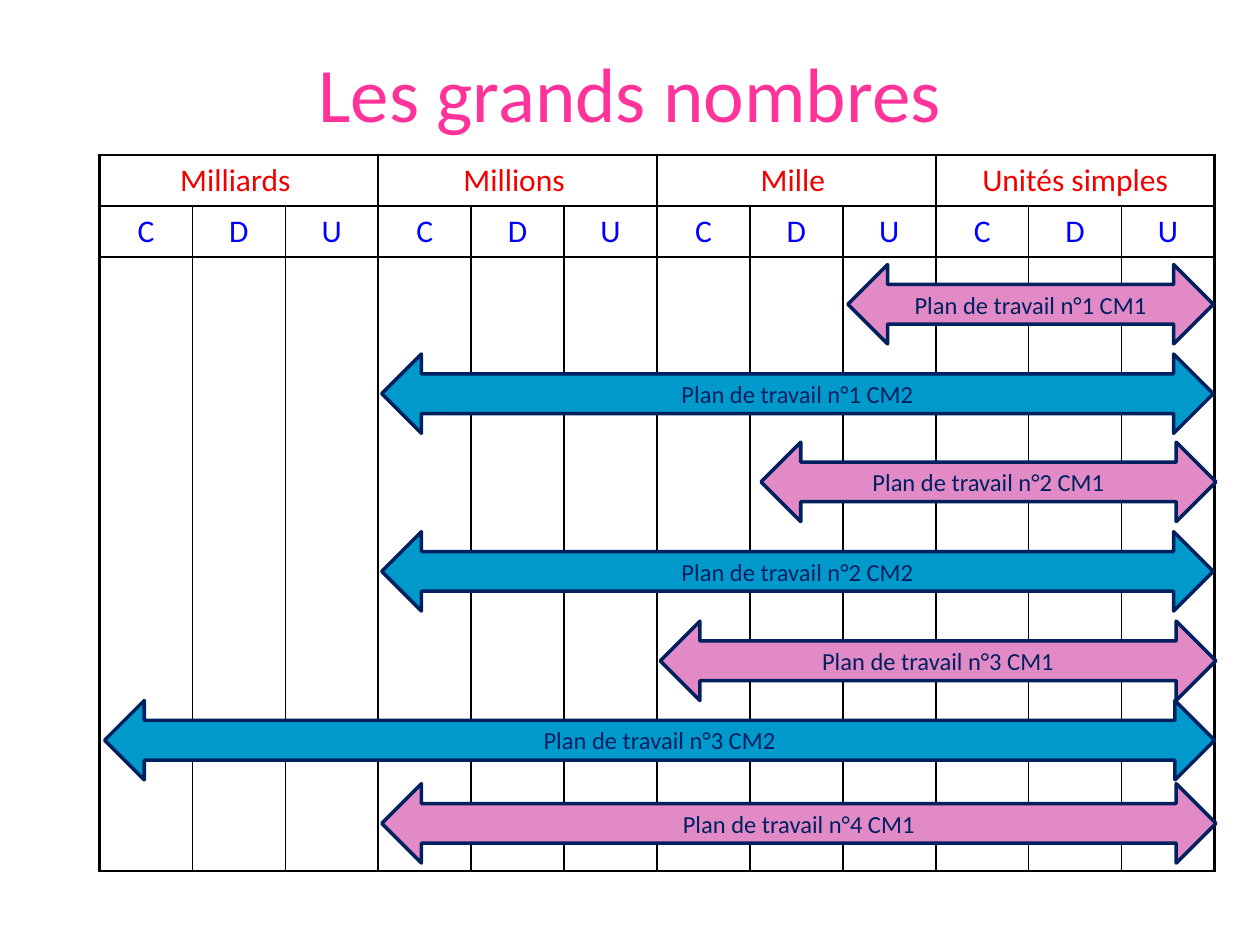
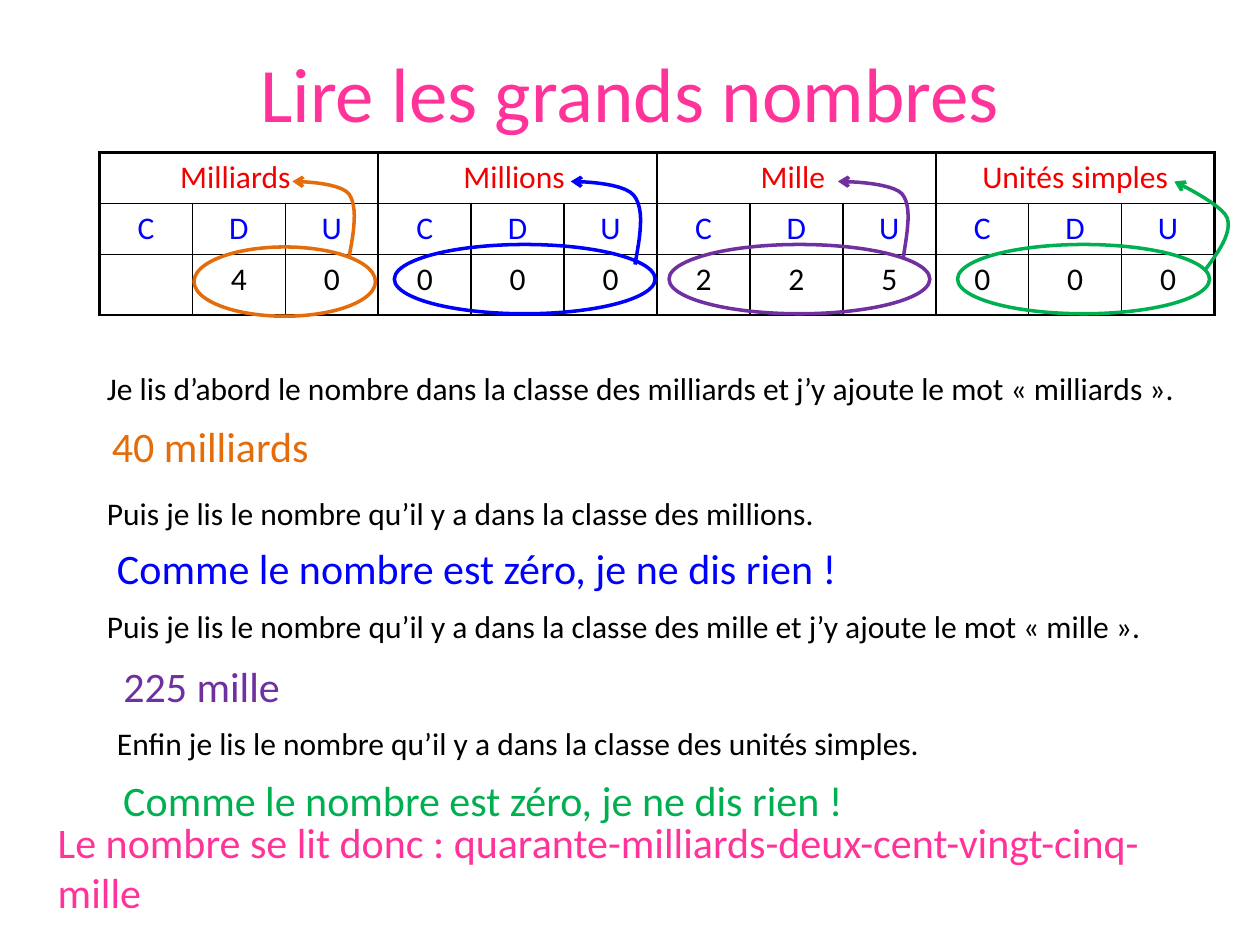
"""Build two slides on reading large numbers in a place-value table."""
from lxml import etree
from pptx import Presentation
from pptx.dml.color import RGBColor
from pptx.enum.shapes import MSO_SHAPE
from pptx.enum.text import MSO_ANCHOR, PP_ALIGN
from pptx.oxml import parse_xml
from pptx.oxml.ns import qn
from pptx.util import Inches, Pt

ARROW, OVAL = MSO_SHAPE.LEFT_RIGHT_ARROW, MSO_SHAPE.OVAL
CENTER, LEFT = PP_ALIGN.CENTER, PP_ALIGN.LEFT
MIDDLE, TOP = MSO_ANCHOR.MIDDLE, MSO_ANCHOR.TOP
FONT = "Calibri"
DRAW_NS = "http://schemas.openxmlformats.org/drawingml/2006/main"
COLORS = {
    "title": "FF3399", "class": "F20000", "unit": "0000FF", "text": "000000",
    "cm1": "E28AC5", "cm2": "0099CC", "edge": "002060",
    "orange": "E46C0A", "blue": "0000FF", "purple": "7030A0", "green": "00B050",
}

CLASSES = ["Milliards ", "Millions ", "Mille ", "Unités simples"]
UNITS = ["C", "D", "U"]
COLS = len(CLASSES) * len(UNITS)
TABLE_X, TABLE_W, HEAD_H = 0.79, 8.85, 0.405

PLANS = [
    ("Plan de travail n°1 CM1", "cm1", 6.73, 2.1, 2.9),
    ("Plan de travail n°1 CM2", "cm2", 3.03, 2.81, 6.6),
    ("Plan de travail n°2 CM1", "cm1", 6.04, 3.51, 3.61),
    ("Plan de travail n°2 CM2", "cm2", 3.03, 4.22, 6.6),
    ("Plan de travail n°3 CM1", "cm1", 5.24, 4.93, 4.41),
    ("Plan de travail n°3 CM2", "cm2", 0.83, 5.56, 8.81),
    ("Plan de travail n°4 CM1", "cm1", 3.03, 6.22, 6.62),
]
PLAN_H = 0.63

DIGITS = ["", "4", "0", "0", "0", "0", "2", "2", "5", "0", "0", "0"]
RINGS = [
    ("purple", 5.31, 1.94, 2.07), ("green", 7.6, 1.94, 2),
    ("blue", 3.13, 1.94, 2.07), ("orange", 1.54, 1.96, 1.44),
]
RING_H = 0.55
HOOKS = [
    ("purple", [(7.17, 2.04), (7.2, 1.84), (7.24, 1.64), (7.16, 1.54),
                (7.07, 1.44), (6.65, 1.44), (6.65, 1.44)]),
    ("green", [(9.56, 2.15), (9.67, 2), (9.78, 1.85), (9.74, 1.73),
               (9.7, 1.62), (9.32, 1.44), (9.32, 1.44)]),
    ("blue", [(5.04, 2.1), (5.08, 1.88), (5.12, 1.66), (5.03, 1.55),
              (4.94, 1.44), (4.53, 1.44), (4.53, 1.44)]),
    ("orange", [(2.77, 2.04), (2.81, 1.84), (2.84, 1.64), (2.77, 1.54),
                (2.69, 1.44), (2.32, 1.44), (2.32, 1.44)]),
]
STEPS = [
    ("Je lis d’abord le nombre dans la classe des milliards et j’y ajoute le mot « milliards ».",
     "text", 18, 0.75, 2.88, 8.98, 0.4),
    ("40 milliards", "orange", 24, 0.79, 3.29, 2.05, 0.5),
    ("Puis je lis le nombre qu’il y a dans la classe des millions.",
     "text", 18, 0.75, 3.87, 9.06, 0.4),
    ("Comme le nombre est zéro, je ne dis rien !", "blue", 24, 0.83, 4.26, 8.42, 0.5),
    ("Puis je lis le nombre qu’il y a dans la classe des mille et j’y ajoute le mot « mille ».",
     "text", 18, 0.75, 4.77, 8.98, 0.4),
    ("225 mille", "purple", 24, 0.88, 5.19, 1.88, 0.5),
    ("Enfin je lis le nombre qu’il y a dans la classe des unités simples.",
     "text", 18, 0.83, 5.7, 8.98, 0.4),
    ("Comme le nombre est zéro, je ne dis rien !", "green", 24, 0.88, 6.1, 6.17, 0.5),
    ("Le nombre se lit donc : quarante-milliards-deux-cent-vingt-cinq-mille",
     "title", 24, 0.36, 6.43, 8.98, 0.91),
]


def rgb(name):
    return RGBColor.from_string(COLORS[name])


def box(*sizes):
    return [Inches(size) for size in sizes]


def write(frame, text, color, size, align=LEFT, anchor=TOP):
    frame.text = text
    frame.word_wrap = True
    frame.vertical_anchor = anchor
    para = frame.paragraphs[0]
    para.alignment = align
    for run in para.runs:
        run.font.name = FONT
        run.font.size = Pt(size)
        run.font.color.rgb = rgb(color)


def outline(shape, color):
    shape.shadow.inherit = False
    shape.line.color.rgb = rgb(color)
    shape.line.width = Pt(2)


def add_slide(deck, title):
    slide = deck.slides.add_slide(deck.slide_layouts[5])
    head = slide.shapes.title
    head.left, head.top, head.width, head.height = box(0.5, 0.3, 9, 0.85)
    write(head.text_frame, title, "title", 44, CENTER, MIDDLE)
    return slide


def edge_cell(cell, row, col):
    head = row == 0
    thick = {
        "L": head or col % 3 == 0, "R": head or col % 3 == 2,
        "T": head, "B": row == 2,
    }
    props = cell._tc.get_or_add_tcPr()
    for place, (side, bold) in enumerate(thick.items()):
        width = Pt(1.5 if bold else 1)
        props.insert(place, parse_xml(
            f'<a:ln{side} xmlns:a="{DRAW_NS}" w="{width}"><a:solidFill>'
            f'<a:srgbClr val="{COLORS["text"]}"/></a:solidFill></a:ln{side}>'))


def add_grid(slide, top, last_h, digits):
    heights = [HEAD_H, HEAD_H, last_h]
    frame = slide.shapes.add_table(3, COLS, *box(TABLE_X, top, TABLE_W, sum(heights)))
    grid = frame.table
    grid.first_row = grid.horz_banding = False
    for row, height in zip(grid.rows, heights):
        row.height = Inches(height)
    for col in grid.columns:
        col.width = Inches(TABLE_W / COLS)
    for r in range(3):
        for c in range(COLS):
            cell = grid.cell(r, c)
            cell.fill.background()
            edge_cell(cell, r, c)
    for i, name in enumerate(CLASSES):
        first = grid.cell(0, 3 * i)
        first.merge(grid.cell(0, 3 * i + 2))
        write(first.text_frame, name, "class", 18, CENTER)
    for c in range(COLS):
        unit = grid.cell(1, c)
        write(unit.text_frame, UNITS[c % 3], "unit", 18, CENTER)
        unit.vertical_anchor = MIDDLE
        if digits:
            write(grid.cell(2, c).text_frame, digits[c], "text", 18, CENTER)


def add_plan(slide, text, level, left, top, width):
    plan = slide.shapes.add_shape(ARROW, *box(left, top, width, PLAN_H))
    outline(plan, "edge")
    plan.fill.solid()
    plan.fill.fore_color.rgb = rgb(level)
    write(plan.text_frame, text, "edge", 14, CENTER, MIDDLE)


def add_ring(slide, color, left, top, width):
    ring = slide.shapes.add_shape(OVAL, *box(left, top, width, RING_H))
    ring.fill.background()
    outline(ring, color)


def bend(points, count=12):
    for i in range(1, count + 1):
        t = i / count
        parts = ((1 - t) ** 3, 3 * t * (1 - t) ** 2, 3 * t * t * (1 - t), t ** 3)
        yield tuple(Inches(sum(p * q for p, q in zip(parts, axis)))
                    for axis in zip(*points))


def add_hook(slide, color, points):
    pen = slide.shapes.build_freeform(*box(*points[0]))
    pen.add_line_segments([*bend(points[:4]), *bend(points[3:])], close=False)
    hook = pen.convert_to_shape()
    hook.fill.background()
    outline(hook, color)
    etree.SubElement(hook.line._get_or_add_ln(), qn("a:tailEnd"), type="arrow")


def add_step(slide, text, color, size, *place):
    step = slide.shapes.add_textbox(*box(*place))
    write(step.text_frame, text, color, size)


def main():
    deck = Presentation()
    deck.slide_width, deck.slide_height = box(10, 7.5)

    slide = add_slide(deck, "Les grands nombres")
    add_grid(slide, 1.23, 4.87, None)
    for plan in PLANS:
        add_plan(slide, *plan)

    slide = add_slide(deck, "Lire les grands nombres")
    add_grid(slide, 1.21, 0.48, DIGITS)
    for ring in RINGS:
        add_ring(slide, *ring)
    for hook in HOOKS:
        add_hook(slide, *hook)
    for step in STEPS:
        add_step(slide, *step)

    deck.save("out.pptx")


if __name__ == "__main__":
    main()
